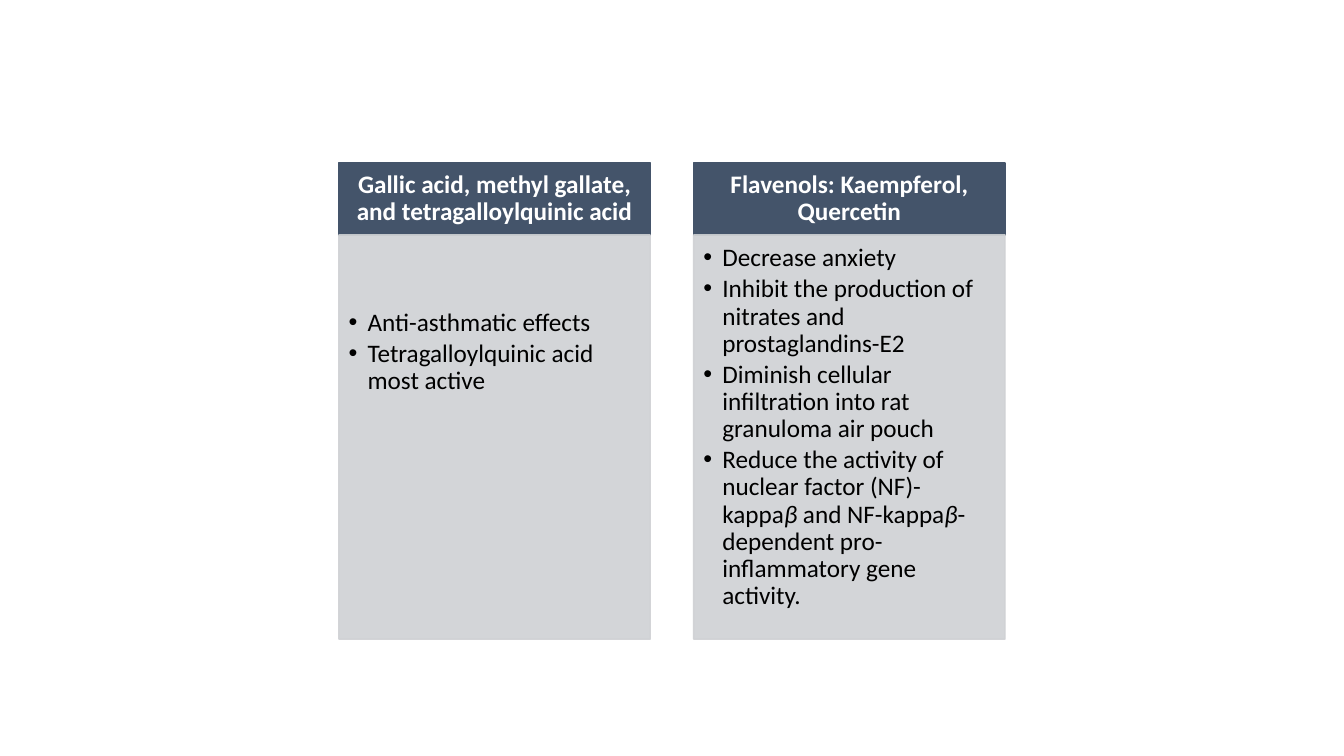
import pptx
import pptx.util
import pptx.dml.color
import pptx.enum.shapes
import pptx.enum.text
import lxml.etree

Pt = pptx.util.Pt
COLORS = {"header": "44546A", "body": "CFD1D4", "header_text": "FFFFFF", "body_text": "000000"}

# Column layout
LEFT, TOP = 242, 116.6
WIDTH, HEADER_HEIGHT, BODY_HEIGHT = 222.5, 51.2, 288.7
COLUMN_STEP = 253.4
BULLET_INDENT = 13.5

# Each bullet is a list of (text, italic) runs; body_inset is the space above the first bullet
COLUMNS = [
    {
        "title": "Gallic acid, methyl gallate, and tetragalloylquinic acid",
        "body_inset": 53.6,
        "bullets": [
            [("Anti-asthmatic effects", False)],
            [("Tetragalloylquinic acid most active", False)],
        ],
    },
    {
        "title": "Flavenols: Kaempferol, Quercetin",
        "body_inset": 7.2,
        "bullets": [
            [("Decrease anxiety", False)],
            [("Inhibit the production of nitrates and prostaglandins-E2", False)],
            [("Diminish cellular infiltration into rat granuloma air pouch", False)],
            [
                ("Reduce the activity of nuclear factor (NF)-kappa", False),
                ("β", True),
                (" and NF-kappa", False),
                ("β", True),
                ("-dependent pro-inflammatory gene activity.", False),
            ],
        ],
    },
]


def add_panel(slide, left, top, height, color, margins, anchor):
    """Add a filled rectangle and return it with its text frame prepared."""
    shape = slide.shapes.add_shape(
        pptx.enum.shapes.MSO_SHAPE.RECTANGLE, Pt(left), Pt(top), Pt(WIDTH), Pt(height))
    shape.shadow.inherit = False
    shape.fill.solid()
    shape.fill.fore_color.rgb = pptx.dml.color.RGBColor.from_string(COLORS[color])
    shape.line.color.rgb = pptx.dml.color.RGBColor.from_string(COLORS[color])
    shape.line.width = Pt(1)
    frame = shape.text_frame
    frame.word_wrap = True
    frame.vertical_anchor = anchor
    frame.margin_left, frame.margin_top, frame.margin_right, frame.margin_bottom = map(Pt, margins)
    return shape


def add_runs(paragraph, runs, color, bold, alignment, space_after):
    paragraph.alignment = alignment
    paragraph.line_spacing = 0.9
    paragraph.space_after = Pt(space_after)
    for text, italic in runs:
        run = paragraph.add_run()
        run.text = text
        run.font.name = "Calibri"
        run.font.size = Pt(18)
        run.font.bold = bold
        run.font.italic = italic
        run.font.color.rgb = pptx.dml.color.RGBColor.from_string(COLORS[color])


presentation = pptx.Presentation()
presentation.slide_width, presentation.slide_height = Pt(960), Pt(540)
slide = presentation.slides.add_slide(presentation.slide_layouts[6])

for index, column in enumerate(COLUMNS):
    left = LEFT + index * COLUMN_STEP

    # Header
    header = add_panel(slide, left, TOP, HEADER_HEIGHT, "header", (10.08, 5.76, 10.08, 5.76),
                       pptx.enum.text.MSO_ANCHOR.MIDDLE)
    add_runs(header.text_frame.paragraphs[0], [(column["title"], False)], "header_text", True,
             pptx.enum.text.PP_ALIGN.CENTER, 6.3)

    # Body panel, slightly transparent in fill and outline
    body = add_panel(slide, left, TOP + HEADER_HEIGHT, BODY_HEIGHT, "body",
                     (7.2, column["body_inset"], 10.08, 11.52), pptx.enum.text.MSO_ANCHOR.TOP)
    for color_element in body.element.spPr.iter(pptx.oxml.ns.qn("a:srgbClr")):
        lxml.etree.SubElement(color_element, pptx.oxml.ns.qn("a:alpha"), val="90000")

    # Bullets
    for number, runs in enumerate(column["bullets"]):
        frame = body.text_frame
        paragraph = frame.paragraphs[0] if number == 0 else frame.add_paragraph()
        add_runs(paragraph, runs, "body_text", False, pptx.enum.text.PP_ALIGN.LEFT, 2.7)
        properties = paragraph._p.get_or_add_pPr()
        properties.set("marL", str(Pt(BULLET_INDENT)))
        properties.set("indent", str(-Pt(BULLET_INDENT)))
        lxml.etree.SubElement(properties, pptx.oxml.ns.qn("a:buFont"), typeface="Arial")
        lxml.etree.SubElement(properties, pptx.oxml.ns.qn("a:buChar"), char="•")

presentation.save("out.pptx")
